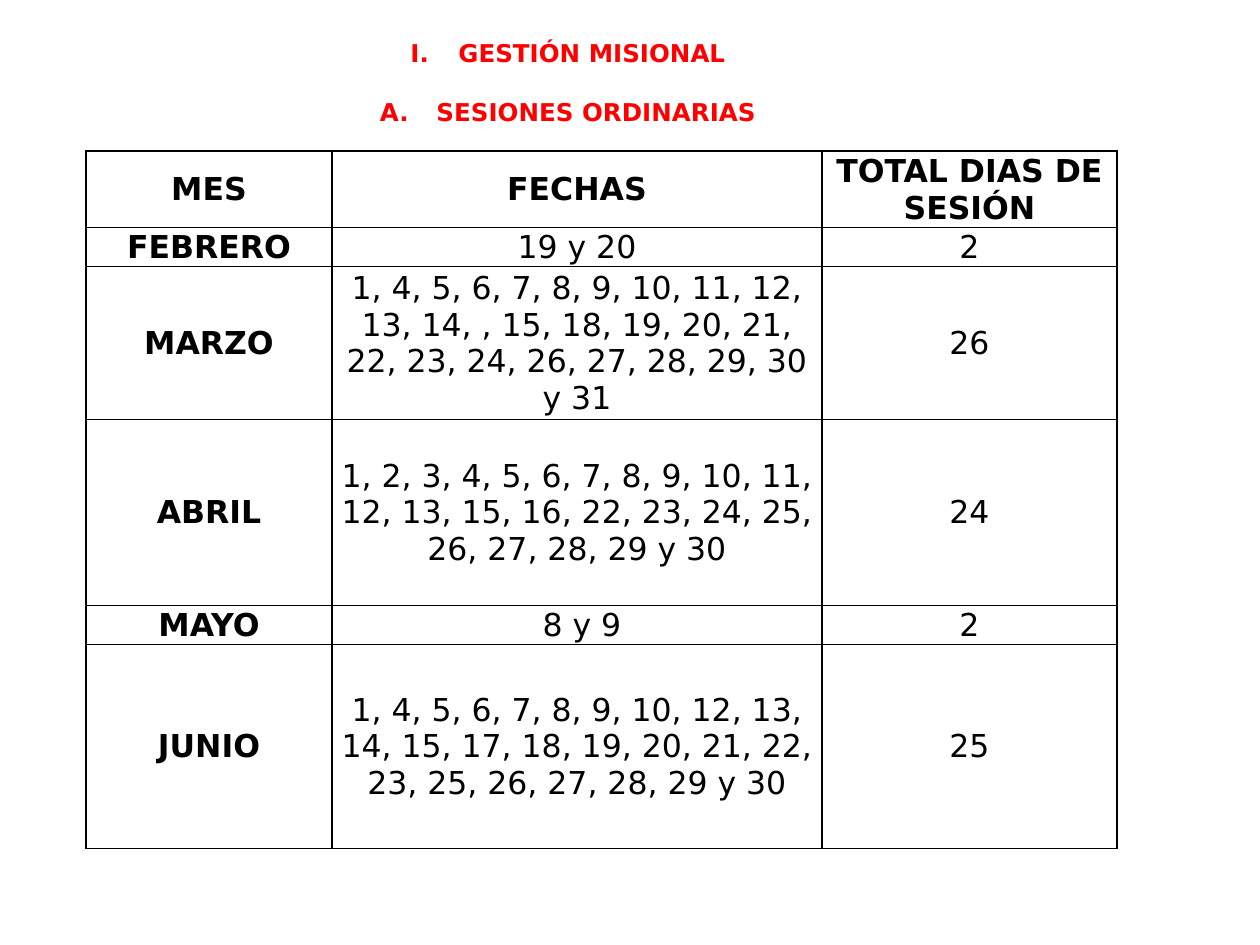
from lxml import etree
from pptx import Presentation
from pptx import util as u
from pptx.dml.color import RGBColor
from pptx.enum import text
from pptx.oxml.ns import qn

HUES = {"title": "FF0000", "ink": "000000"}
FONT = "DejaVu Sans"
HEADS = [("romanUcPeriod", "GESTIÓN MISIONAL"),
         ("alphaUcPeriod", " SESIONES ORDINARIAS")]
ROWS = [
    ("MES", "FECHAS", "TOTAL DIAS DE SESIÓN"),
    ("FEBRERO", "19 y 20", "2"),
    ("MARZO", "1, 4, 5, 6, 7, 8, 9, 10, 11, 12, 13, 14, , 15, 18, 19, 20, 21, "
              "22, 23, 24, 26, 27, 28, 29, 30 y 31", "26"),
    ("ABRIL", "1, 2, 3, 4, 5, 6, 7, 8, 9, 10, 11, 12, 13, 15, 16, 22, 23, 24, "
              "25, 26, 27, 28, 29 y 30", "24"),
    ("MAYO", " 8 y 9", "2"),
    ("JUNIO", "1, 4, 5, 6, 7, 8, 9, 10, 12, 13, 14, 15, 17, 18, 19, 20, 21, "
              "22, 23, 25, 26, 27, 28, 29 y 30", "25"),
]
WIDTHS = [246, 490, 295]
HEIGHTS = [76, 39, 153, 186, 39, 204]


def px(n):
    return u.Emu(round(n * 914400 / 126))


def style(par, size, hue, bold):
    par.alignment = text.PP_ALIGN.CENTER
    font = par.font
    font.name, font.size, font.bold = FONT, u.Pt(size), bold
    font.color.rgb = RGBColor.from_string(HUES[hue])


def number(par, kind):
    """Give the paragraph an automatic number with a hanging indent."""
    props = par._p.get_or_add_pPr()
    props.set("marL", str(px(48)))
    props.set("indent", str(-px(48)))
    etree.SubElement(props, qn("a:buFont"), typeface="+mj-lt")
    etree.SubElement(props, qn("a:buAutoNum"), type=kind)


def border(cell):
    props = cell._tc.get_or_add_tcPr()
    for spot, side in enumerate("LRTB"):
        line = etree.Element(qn(f"a:ln{side}"), w=str(u.Pt(1)))
        fill = etree.SubElement(line, qn("a:solidFill"))
        etree.SubElement(fill, qn("a:srgbClr"), val=HUES["ink"])
        props.insert(spot, line)


def titles(slide, x, y, w, h):
    frame = slide.shapes.add_textbox(px(x), px(y), px(w), px(h)).text_frame
    frame.word_wrap = True
    for i, (kind, words) in enumerate(HEADS):
        par = frame.add_paragraph() if i else frame.paragraphs[0]
        par.text = words
        if i:
            par.space_before = u.Pt(17)
        number(par, kind)
        style(par, 14, "title", True)


def sessions(slide, x, y):
    grid = slide.shapes.add_table(len(ROWS), len(WIDTHS), px(x), px(y),
                                  px(sum(WIDTHS)), px(sum(HEIGHTS))).table
    grid.first_row = grid.horz_banding = False
    for col, wide in zip(grid.columns, WIDTHS):
        col.width = px(wide)
    for r, (row, high) in enumerate(zip(ROWS, HEIGHTS)):
        grid.rows[r].height = px(high)
        for c, words in enumerate(row):
            cell = grid.cell(r, c)
            cell.text = words
            cell.fill.background()
            cell.vertical_anchor = text.MSO_ANCHOR.MIDDLE
            cell.margin_left = cell.margin_right = cell.margin_top = px(1)
            cell.margin_bottom = 0
            border(cell)
            style(cell.text_frame.paragraphs[0], 18, "ink", r == 0 or c == 0)


def main():
    deck = Presentation()
    deck.slide_width, deck.slide_height = px(1260), px(945)
    slide = deck.slides.add_slide(deck.slide_layouts[6])
    titles(slide, 253, 32, 630, 134)
    sessions(slide, 86, 151)
    deck.save("out.pptx")


if __name__ == "__main__":
    main()
